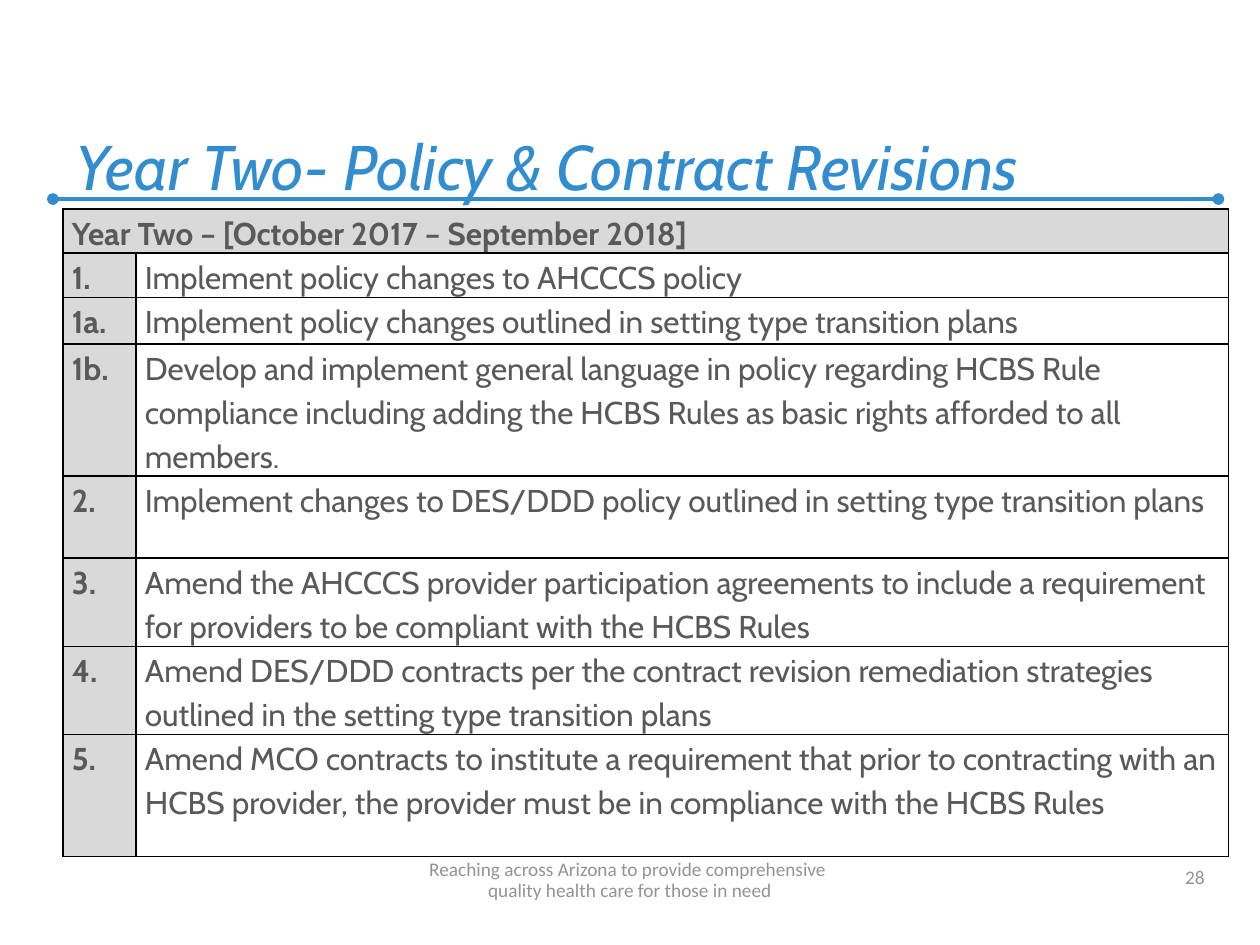
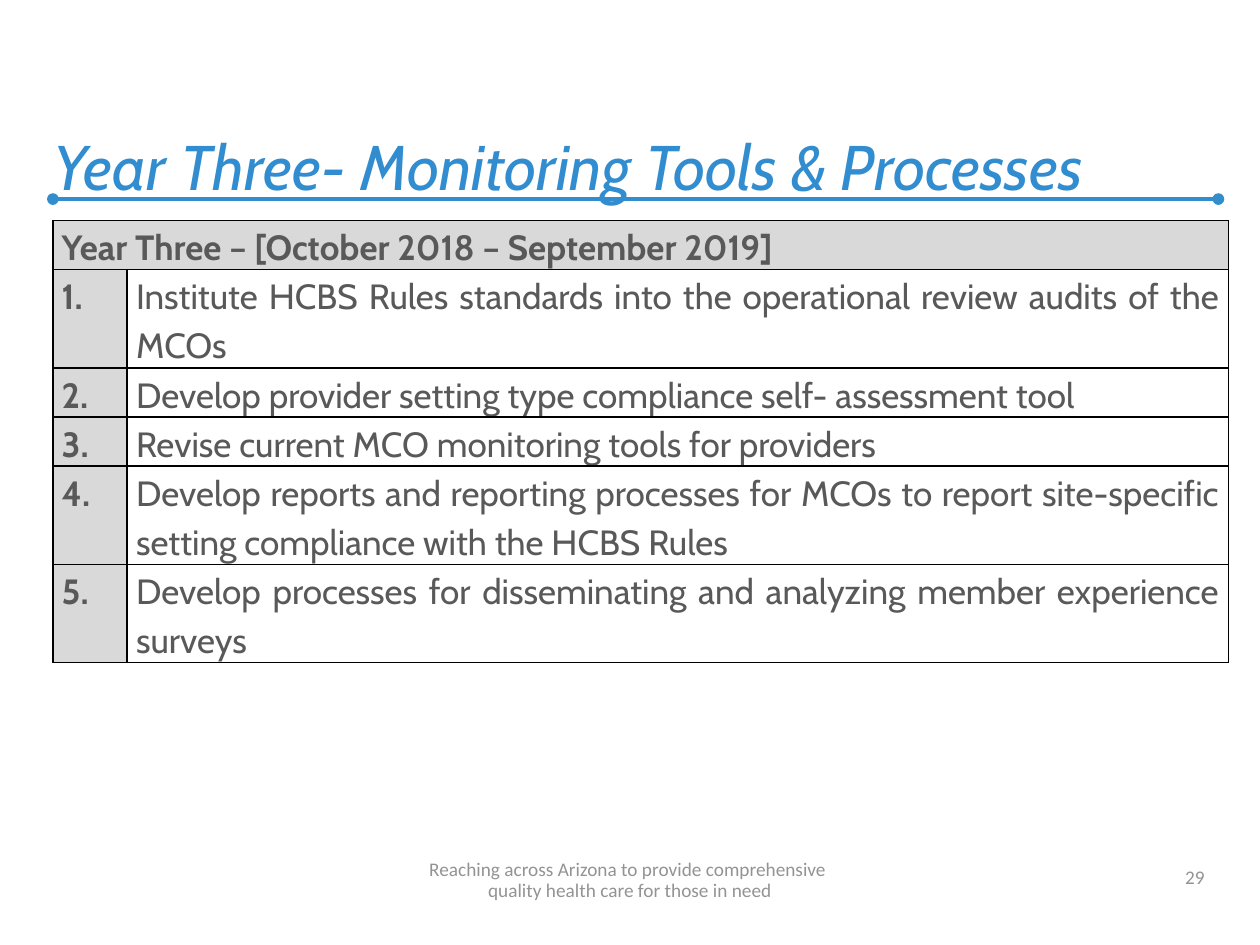
from dataclasses import dataclass

from lxml import etree
from pptx import Presentation
from pptx import util as u
from pptx.dml.color import RGBColor
from pptx.enum import shapes, text
from pptx.oxml import ns

HUES = {
    "line": "318DCC",
    "title": "318DCF",
    "foot": "939393",
    "body": "595959",
    "band": "D9D9D9",
    "edge": "000000",
}
FOOT = "Reaching across Arizona to provide comprehensive \vquality health care for those in need"
ALIGN = text.PP_ALIGN


@dataclass
class Style:
    font: str
    size: int
    hue: str
    bold: bool = False
    slant: bool = False


@dataclass
class Row:
    mark: str
    task: str
    high: float


@dataclass
class Page:
    title: str
    left: float
    wide: float
    number: int
    head: str
    head_high: float
    size: int
    align: ALIGN
    spot: tuple[float, float]
    cols: tuple[float, float]
    rows: list[Row]


TITLE = Style("Cabin", 36, "title", slant=True)
SMALL = Style("Calibri", 11, "foot")

PAGES = [
    Page(
        "Year Two- Policy & Contract Revisions", 0.5, 9.08, 28,
        "Year Two – [October 2017 – September 2018]", 0.35, 18, ALIGN.LEFT,
        (0.5, 1.66), (0.58, 8.67),
        [
            Row("1.", "Implement policy changes to AHCCCS policy", 0.35),
            Row("1a.", "Implement policy changes outlined in setting type transition plans", 0.37),
            Row("1b.", "Develop and implement general language in policy regarding HCBS Rule "
                "compliance including adding the HCBS Rules as basic rights afforded to all "
                "members.", 1.05),
            Row("2.", "Implement changes to DES/DDD policy outlined in setting type "
                "transition plans", 0.65),
            Row("3.", "Amend the AHCCCS provider participation agreements to include a "
                "requirement for providers to be compliant with the HCBS Rules", 0.7),
            Row("4.", "Amend DES/DDD contracts per the contract revision remediation "
                "strategies outlined in the setting type transition plans", 0.7),
            Row("5.", "Amend MCO contracts to institute a requirement that prior to "
                "contracting with an HCBS provider, the provider must be in compliance "
                "with the HCBS Rules", 0.97),
        ],
    ),
    Page(
        "Year Three- Monitoring Tools & Processes", 0.33, 9.42, 29,
        "Year Three – [October 2018 – September 2019]", 0.39, 20, ALIGN.JUSTIFY,
        (0.42, 1.75), (0.59, 8.74),
        [
            Row("1.", "Institute HCBS Rules standards into the operational review audits "
                "of the MCOs", 0.78),
            Row("2.", "Develop provider setting type compliance self- assessment tool", 0.39),
            Row("3.", "Revise current MCO monitoring tools for providers", 0.39),
            Row("4.", "Develop reports and reporting processes for MCOs to report "
                "site-specific setting compliance with the HCBS Rules", 0.78),
            Row("5.", "Develop processes for disseminating and analyzing member experience "
                "surveys", 0.78),
        ],
    ),
]


def color(name: str) -> RGBColor:
    return RGBColor.from_string(HUES[name])


def write(frame, words: str, style: Style, align: ALIGN):
    frame.text = words
    para = frame.paragraphs[0]
    para.alignment = align
    for run in para.runs:
        font = run.font
        font.name, font.size = style.font, u.Pt(style.size)
        font.bold, font.italic = style.bold, style.slant
        font.color.rgb = color(style.hue)
    return para


def add_text(slide, box: tuple, words: str, style: Style, align: ALIGN):
    frame = slide.shapes.add_textbox(*map(u.Inches, box)).text_frame
    frame.word_wrap = True
    frame.vertical_anchor = text.MSO_ANCHOR.BOTTOM
    return write(frame, words, style, align)


def add_rule(slide) -> None:
    ends = map(u.Inches, (0.42, 1.58, 9.67, 1.58))
    rule = slide.shapes.add_connector(shapes.MSO_CONNECTOR.STRAIGHT, *ends)
    rule.line.color.rgb = color("line")
    rule.line.width = u.Pt(2.25)
    line = rule.line._get_or_add_ln()
    for tag in ("a:headEnd", "a:tailEnd"):
        etree.SubElement(line, ns.qn(tag), type="oval")
    etree.SubElement(rule._element.spPr, ns.qn("a:effectLst"))


def add_edges(cell) -> None:
    props = cell._tc.get_or_add_tcPr()
    for side in "LRTB":
        line = etree.SubElement(props, ns.qn(f"a:ln{side}"), w=str(u.Pt(1)))
        fill = etree.SubElement(line, ns.qn("a:solidFill"))
        etree.SubElement(fill, ns.qn("a:srgbClr"), val=HUES["edge"])


def fill_cell(cell, words: str, size: int, align: ALIGN, band: bool) -> None:
    cell.margin_left = cell.margin_right = u.Inches(0.07)
    cell.margin_top = cell.margin_bottom = 0
    add_edges(cell)
    if band:
        cell.fill.solid()
        cell.fill.fore_color.rgb = color("band")
    else:
        cell.fill.background()
    para = write(cell.text_frame, words, Style("Cabin", size, "body", bold=band), align)
    para.line_spacing = 1.15
    para.space_after = u.Pt(10)


def add_plan(slide, page: Page) -> None:
    highs = [page.head_high] + [row.high for row in page.rows]
    box = (*page.spot, sum(page.cols), sum(highs))
    table = slide.shapes.add_table(len(highs), 2, *map(u.Inches, box)).table
    table.first_row = table.horz_banding = False
    for col, wide in zip(table.columns, page.cols):
        col.width = u.Inches(wide)
    for line, high in zip(table.rows, highs):
        line.height = u.Inches(high)
    table.cell(0, 0).merge(table.cell(0, 1))
    add_edges(table.cell(0, 1))
    fill_cell(table.cell(0, 0), page.head, page.size, ALIGN.JUSTIFY, True)
    for at, row in enumerate(page.rows, 1):
        fill_cell(table.cell(at, 0), row.mark, page.size, ALIGN.JUSTIFY, True)
        fill_cell(table.cell(at, 1), row.task, page.size, page.align, False)


def add_page(deck, page: Page) -> None:
    slide = deck.slides.add_slide(deck.slide_layouts[6])
    add_rule(slide)
    add_text(slide, (page.left, 0.33, page.wide, 1.33), page.title, TITLE, ALIGN.LEFT)
    add_text(slide, (7.33, 6.78, 2.33, 0.32), str(page.number), SMALL, ALIGN.RIGHT)
    foot = add_text(slide, (0, 6.78, 10, 0.42), FOOT, SMALL, ALIGN.CENTER)
    foot.line_spacing = u.Pt(12)
    add_plan(slide, page)


def main() -> None:
    deck = Presentation()
    deck.slide_width, deck.slide_height = u.Inches(10), u.Inches(7.5)
    for page in PAGES:
        add_page(deck, page)
    deck.save("out.pptx")


if __name__ == "__main__":
    main()
